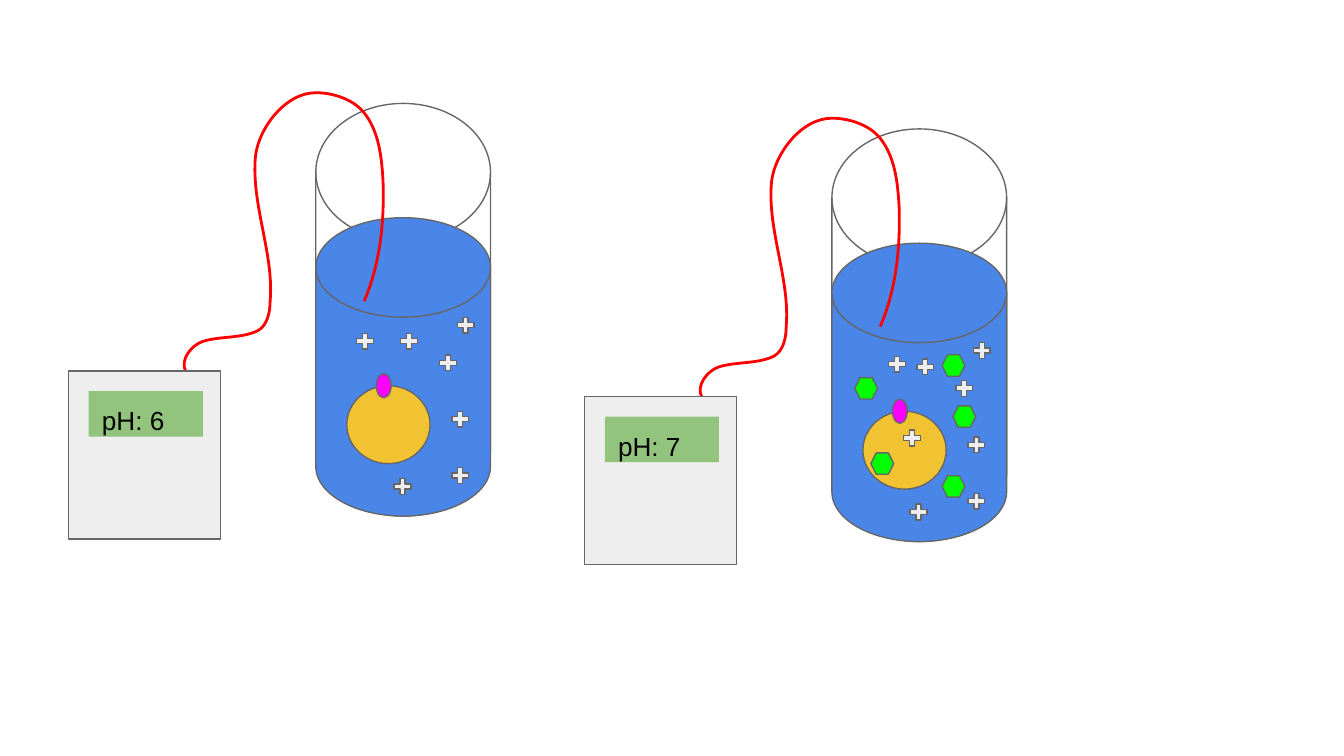
from pptx import Presentation
from pptx.dml.color import RGBColor
from pptx.enum import shapes as s, text as t
from pptx.oxml.ns import qn
from pptx.util import Inches, Pt

COLORS = {
    "outline": "666666", "water": "4A86E8", "cell": "F1C232", "wire": "FF0000",
    "meter": "EEEEEE", "display": "93C47D", "channel": "FF00FF",
    "proton": "EEEEEE", "molecule": "00FF00", "text": "000000",
}
SHAPE = s.MSO_SHAPE
PARTICLE_SIZE = (0.17, 0.16)

# Positions below belong to the first setup; the second one is shifted.
SECOND_SHIFT = (3.84, 0.19)
SHARED_PROTONS = [(3.25, 2.62), (3.34, 3.04), (3.38, 2.34),
                  (2.91, 3.54), (2.96, 2.46), (3.34, 3.46)]
FIRST_PROTONS = [(2.63, 2.46)]
SECOND_PROTONS = [(2.75, 2.44), (2.86, 2.99)]
SECOND_MOLECULES = [(3.17, 2.45), (2.52, 2.62), (3.17, 3.35),
                    (3.25, 2.83), (2.64, 3.18)]
# Start point, then two control points and an end point for each curve.
WIRE = [
    (2.71, 2.24),
    (2.83, 1.96), (2.86, 1.65), (2.85, 1.35),
    (2.84, 1.17), (2.82, 0.98), (2.71, 0.84),
    (2.63, 0.74), (2.48, 0.69), (2.35, 0.69),
    (2.12, 0.69), (1.92, 0.96), (1.90, 1.17),
    (1.87, 1.53), (2.04, 1.89), (2.01, 2.24),
    (2.01, 2.32), (1.99, 2.42), (1.92, 2.46),
    (1.80, 2.52), (1.64, 2.50), (1.51, 2.54),
    (1.42, 2.57), (1.34, 2.68), (1.38, 2.76),
]


def color(name):
    return RGBColor.from_string(COLORS[name])


def moved(point, shift):
    return Inches(point[0] + shift[0]), Inches(point[1] + shift[1])


def add_shape(slide, kind, position, size, shift, fill=None, outlined=True):
    shape = slide.shapes.add_shape(
        kind, *moved(position, shift), Inches(size[0]), Inches(size[1]))
    shape.shadow.inherit = False
    if fill:
        shape.fill.solid()
        shape.fill.fore_color.rgb = color(fill)
    else:
        shape.fill.background()
    if outlined:
        shape.line.color.rgb = color("outline")
        shape.line.width = Pt(0.75)
    else:
        shape.line.fill.background()
    return shape


def write_text(shape, content, size=14, font="Arial", fill="text"):
    frame = shape.text_frame
    frame.word_wrap = True
    frame.vertical_anchor = t.MSO_ANCHOR.TOP
    frame.margin_left = frame.margin_right = Inches(0.1)
    frame.margin_top = frame.margin_bottom = Inches(0.1)
    paragraph = frame.paragraphs[0]
    paragraph.alignment = t.PP_ALIGN.LEFT
    run = paragraph.add_run()
    run.text = content
    run.font.size = Pt(size)
    run.font.name = font
    run.font.color.rgb = color(fill)


def add_wire(slide, shift):
    """Draw the probe wire, turning each three line segments into one curve."""
    start, *points = [moved(point, shift) for point in WIRE]
    builder = slide.shapes.build_freeform(*start)
    builder.add_line_segments(points, close=False)
    wire = builder.convert_to_shape()
    segments = list(wire._element.iter(qn("a:lnTo")))
    for first, second, end in zip(*[iter(segments)] * 3):
        curve = first.makeelement(qn("a:cubicBezTo"), {})
        first.addprevious(curve)
        for segment in (first, second, end):
            curve.append(segment[0])
            segment.getparent().remove(segment)
    wire.shadow.inherit = False
    wire.fill.background()
    wire.line.color.rgb = color("wire")
    wire.line.width = Pt(1.5)


def add_particles(slide, kind, positions, shift, fill, adjustment):
    for position in positions:
        particle = add_shape(slide, kind, position, PARTICLE_SIZE, shift, fill)
        particle.adjustments[0] = adjustment


def add_setup(slide, reading, protons, molecules=(), shift=(0, 0)):
    """Draw a beaker holding a cell, wired to a pH meter."""
    add_shape(slide, SHAPE.FLOWCHART_MAGNETIC_DISK, (2.35, 0.77), (1.3, 3.07), shift)
    add_shape(slide, SHAPE.FLOWCHART_MAGNETIC_DISK, (2.35, 1.62), (1.3, 2.22), shift, "water")
    add_shape(slide, SHAPE.OVAL, (2.58, 2.87), (0.62, 0.58), shift, "cell")
    add_wire(slide, shift)
    add_shape(slide, SHAPE.RECTANGLE, (0.51, 2.76), (1.13, 1.25), shift, "meter")
    display = add_shape(slide, SHAPE.RECTANGLE, (0.66, 2.91), (0.85, 0.34),
                        shift, "display", outlined=False)
    write_text(display, reading)
    add_shape(slide, SHAPE.OVAL, (2.8, 2.78), (0.11, 0.18), shift, "channel")
    add_particles(slide, SHAPE.MATH_PLUS, protons, shift, "proton", 0.235)
    add_particles(slide, SHAPE.HEXAGON, molecules, shift, "molecule", 0.25)


def main():
    presentation = Presentation()
    presentation.slide_width = Inches(10)
    presentation.slide_height = presentation.slide_width * 9 // 16
    slide = presentation.slides.add_slide(presentation.slide_layouts[6])
    add_setup(slide, "pH: 6", SHARED_PROTONS + FIRST_PROTONS)
    add_setup(slide, "pH: 7", SHARED_PROTONS + SECOND_PROTONS,
              SECOND_MOLECULES, SECOND_SHIFT)
    presentation.save("out.pptx")


if __name__ == "__main__":
    main()
